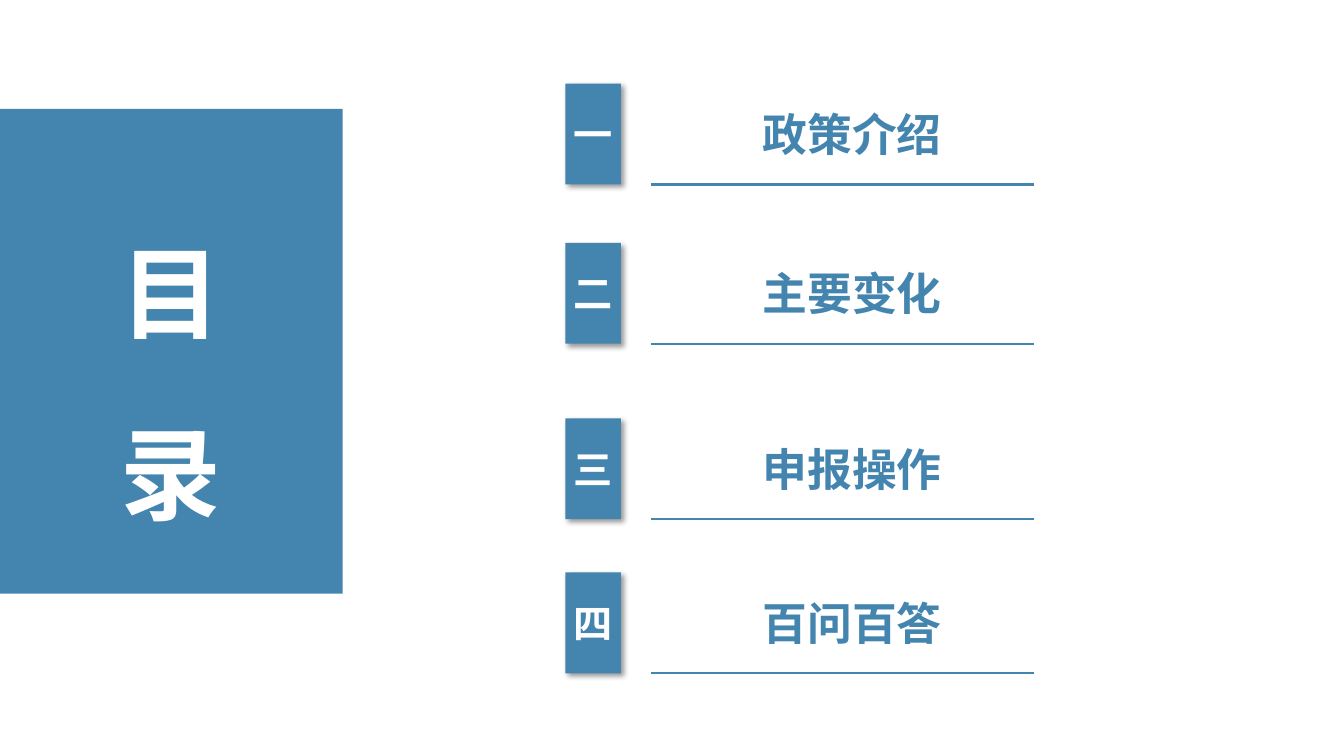
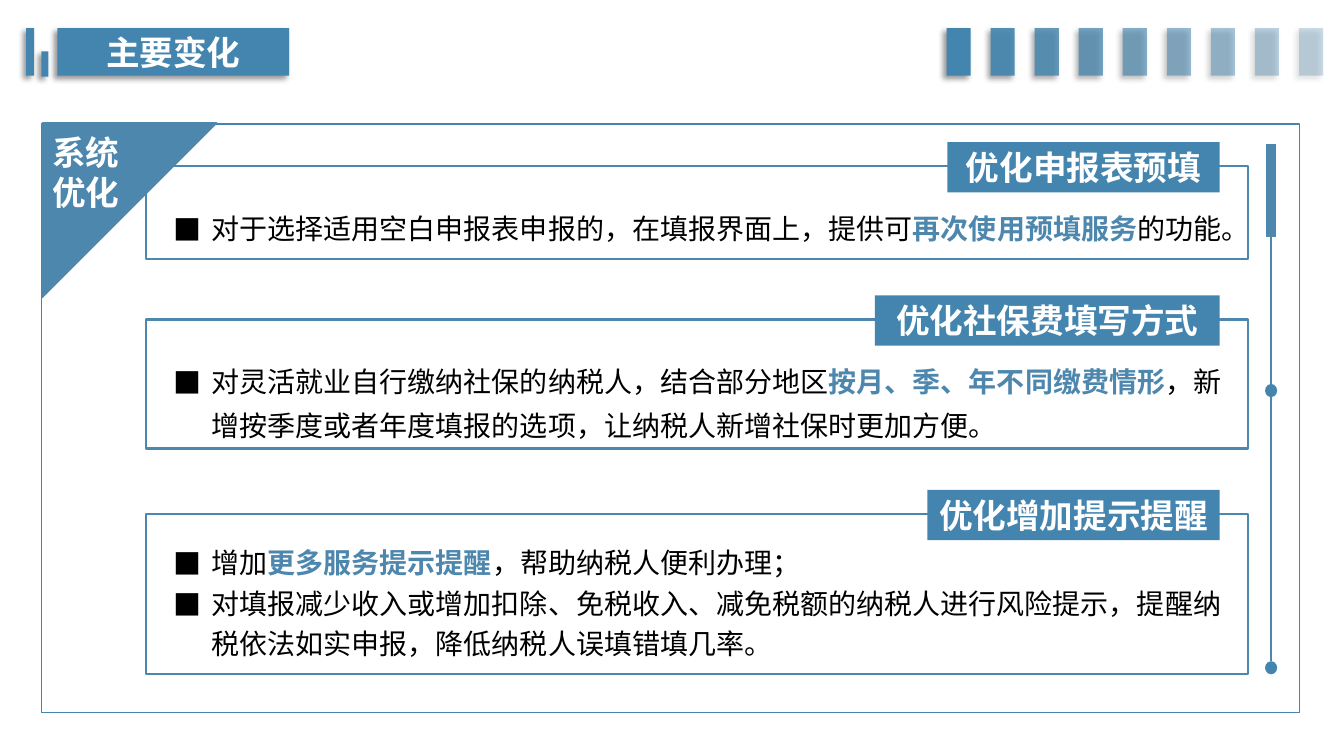
from collections import namedtuple

from lxml import etree
from pptx import Presentation
from pptx.dml.color import RGBColor
from pptx.enum.shapes import MSO_CONNECTOR, MSO_SHAPE
from pptx.enum.text import MSO_ANCHOR, PP_ALIGN
from pptx.oxml.ns import qn
from pptx.util import Inches, Pt

RECTANGLE = MSO_SHAPE.RECTANGLE
OVAL = MSO_SHAPE.OVAL
TRIANGLE = MSO_SHAPE.RIGHT_TRIANGLE
STRAIGHT = MSO_CONNECTOR.STRAIGHT
TOP, MIDDLE = MSO_ANCHOR.TOP, MSO_ANCHOR.MIDDLE
LEFT, CENTER = PP_ALIGN.LEFT, PP_ALIGN.CENTER

FONT = "Noto Sans CJK SC"
BLUE, STEEL, WHITE, BLACK = "4485AF", "4D87AD", "FFFFFF", "000000"
CELL = Inches(0.1)
COLUMNS, ROWS = 133.33, 75
INDENT = 3.8

COVER = {"size": Pt(72), "bold": True, "color": WHITE}
NUMBER = {"size": Pt(28), "bold": True, "color": WHITE}
ENTRY = {"size": Pt(32), "bold": True, "color": BLUE}
HEADING = {"size": Pt(24), "bold": True, "color": WHITE}
BODY = {"size": Pt(20), "bold": False, "color": BLACK}
EMPHASIS = {"size": Pt(20), "bold": True, "color": STEEL}

CONTENTS = [
    (8.3, "一", "政策介绍"),
    (24.1, "二", "主要变化"),
    (41.5, "三", "申报操作"),
    (56.8, "四", "百问百答"),
]

CARDS = [
    {"top": 16.5, "height": 9.2, "tag": "优化申报表预填", "tag_width": 27,
     "body_drop": 3, "spacing": 1.3, "points": [
         [("对于选择适用空白申报表申报的，在填报界面上，提供可", BODY),
          ("再次使用预填服务", EMPHASIS), ("的功能。", BODY)]]},
    {"top": 31.7, "height": 12.8, "tag": "优化社保费填写方式", "tag_width": 34.2,
     "body_drop": 3, "spacing": 1.3, "points": [
         [("对灵活就业自行缴纳社保的纳税人，结合部分地区", BODY),
          ("按月、季、年不同缴费情形", EMPHASIS),
          ("，新增按季度或者年度填报的选项，让纳税人新增社保时更加方便。", BODY)]]},
    {"top": 51, "height": 15.9, "tag": "优化增加提示提醒", "tag_width": 29,
     "body_drop": 2, "spacing": 1.2, "points": [
         [("增加", BODY), ("更多服务提示提醒", EMPHASIS),
          ("，帮助纳税人便利办理；", BODY)],
         [("对填报减少收入或增加扣除、免税收入、减免税额的纳税人进行风险提示，"
           "提醒纳税依法如实申报，降低纳税人误填错填几率。", BODY)]]},
]


class Box(namedtuple("Box", "left top width height")):
    def inner(self, left, top, width, height):
        return Box(self.left + left, self.top + top, width, height)

    def lengths(self):
        return [cells(value) for value in self]


def cells(count):
    return round(count * CELL)


def color(value):
    return RGBColor.from_string(value)


def add_child(parent, tag, **attributes):
    values = {name: str(value) for name, value in attributes.items()}
    return etree.SubElement(parent, qn(tag), values)


def add_shadow(shape, angle):
    effects = shape._element.spPr.find(qn("a:effectLst"))
    shadow = add_child(effects, "a:outerShdw", blurRad=Pt(4), dist=Pt(3),
                       dir=angle * 60000, algn="ctr", rotWithShape=0)
    tint = add_child(shadow, "a:srgbClr", val=BLACK)
    add_child(tint, "a:alpha", val=40000)


def add_block(page, box, fill=None, line=None, weight=1, kind=RECTANGLE,
              shadow_angle=None, opacity=100):
    shape = page.shapes.add_shape(kind, *box.lengths())
    shape.shadow.inherit = False
    if fill:
        shape.fill.solid()
        shape.fill.fore_color.rgb = color(fill)
    else:
        shape.fill.background()
    if line:
        shape.line.color.rgb = color(line)
        shape.line.width = Pt(weight)
    else:
        shape.line.fill.background()
    if opacity < 100:
        tint = shape._element.spPr.find(qn("a:solidFill"))[0]
        add_child(tint, "a:alpha", val=opacity * 1000)
    if shadow_angle is not None:
        add_shadow(shape, shadow_angle)
    return shape


def add_rule(page, start, end, line, weight):
    rule = page.shapes.add_connector(
        STRAIGHT, *[cells(value) for value in (*start, *end)])
    rule.line.color.rgb = color(line)
    rule.line.width = Pt(weight)
    add_child(rule._element.spPr, "a:effectLst")


def add_span(para, text, style):
    span = para.add_run()
    span.text = text
    span.font.color.rgb = color(style["color"])
    for name, value in {**style, "name": FONT}.items():
        if name != "color":
            setattr(span.font, name, value)
    add_child(span._r.get_or_add_rPr(), "a:ea", typeface=FONT)


def add_bullet(para):
    properties = para._p.get_or_add_pPr()
    properties.set("marL", str(cells(INDENT)))
    properties.set("indent", str(-cells(INDENT)))
    add_child(properties, "a:buFont", typeface=FONT)
    add_child(properties, "a:buChar", char="■")


def write(shape, paragraphs, align=CENTER, anchor=MIDDLE, spacing=None,
          bullets=False, margin=None):
    frame = shape.text_frame
    settings = {"word_wrap": True, "vertical_anchor": anchor}
    if margin is not None:
        settings.update(margin_left=margin, margin_right=margin)
    for name, value in settings.items():
        setattr(frame, name, value)
    for index, spans in enumerate(paragraphs):
        para = frame.add_paragraph() if index else frame.paragraphs[0]
        para.alignment = align
        if spacing:
            para.line_spacing = spacing
        if bullets:
            add_bullet(para)
        for text, style in spans:
            add_span(para, text, style)


def add_text(page, box, paragraphs, **settings):
    write(page.shapes.add_textbox(*box.lengths()), paragraphs, **settings)


def add_contents_panel(page, box):
    panel = add_block(page, box, BLUE)
    write(panel, [[(letter, COVER)] for letter in "目录"], spacing=1.5)


def add_contents_entry(page, box, number, title):
    badge = add_block(page, box.inner(0, 0, 5.5, box.height), BLUE,
                      shadow_angle=45)
    write(badge, [[(number, NUMBER)]], margin=0)
    add_text(page, box.inner(8.5, 1.8, 39.9, 6.4), [[(title, ENTRY)]],
             anchor=TOP)
    bottom = box.top + box.height
    add_rule(page, (box.left + 8.5, bottom), (box.left + box.width, bottom),
             BLUE, 1.5)


def add_header(page, box, title):
    add_block(page, box.inner(0, 0, 0.8, box.height), BLUE, shadow_angle=135)
    add_block(page, box.inner(1.5, 2.3, 0.7, 2.5), BLUE, shadow_angle=135)
    banner = add_block(page, box.inner(3.1, 0, 23, box.height), BLUE,
                       shadow_angle=135)
    write(banner, [[(title, HEADING)]])
    for index in range(9):
        bar = box.inner(91.3 + index * 4.37, 0, 2.4, box.height)
        add_block(page, bar, BLUE, shadow_angle=135, opacity=100 - 9 * index)


def add_timeline(page, box):
    center = box.left + box.width / 2
    add_rule(page, (center, box.top), (center, box.top + 9.2), STEEL, 7.25)
    add_rule(page, (center, box.top + 6.9), (center, box.top + box.height),
             STEEL, 1.5)
    for drop in (23.8, 51.3):
        add_block(page, box.inner(0, drop, box.width, 1.3), BLUE, kind=OVAL)


def add_card(page, box, card):
    add_block(page, box, line=STEEL, weight=1.5)
    width = card["tag_width"]
    tag = add_block(page, box.inner(box.width - 2.8 - width, -2.4, width, 5),
                    BLUE)
    write(tag, [[(card["tag"], HEADING)]])
    drop = card["body_drop"]
    add_text(page, box.inner(1.7, drop, 106, box.height - drop),
             card["points"], align=LEFT, anchor=TOP,
             spacing=card["spacing"], bullets=True)


def add_corner(page, box, words):
    corner = add_block(page, box, STEEL, STEEL, kind=TRIANGLE)
    corner.rotation = 90
    add_text(page, box.inner(0, 0.4, 15, 9.1),
             [[(word, HEADING)] for word in words], align=LEFT, anchor=TOP)


def build_contents(page):
    add_contents_panel(page, Box(0, 10.8, 34, 48.1))
    for top, number, title in CONTENTS:
        add_contents_entry(page, Box(56.1, top, 46.5, 10), number, title)


def build_changes(page):
    add_header(page, Box(2.6, 2.8, COLUMNS - 2.6, 4.7), "主要变化")
    frame = Box(4.1, 12.3, 124.8, 58.4)
    add_timeline(page, frame.inner(121.4, 2, 1.2, 51.3))
    for card in CARDS:
        add_card(page, Box(14.5, card["top"], 109.3, card["height"]), card)
    add_block(page, frame, line=BLUE)
    add_corner(page, frame.inner(0.1, -0.1, 17.3, 17.3), ["系统", "优化"])


def main():
    deck = Presentation()
    deck.slide_width, deck.slide_height = cells(COLUMNS), cells(ROWS)
    for build in (build_contents, build_changes):
        build(deck.slides.add_slide(deck.slide_layouts[6]))
    deck.save("out.pptx")


if __name__ == "__main__":
    main()
